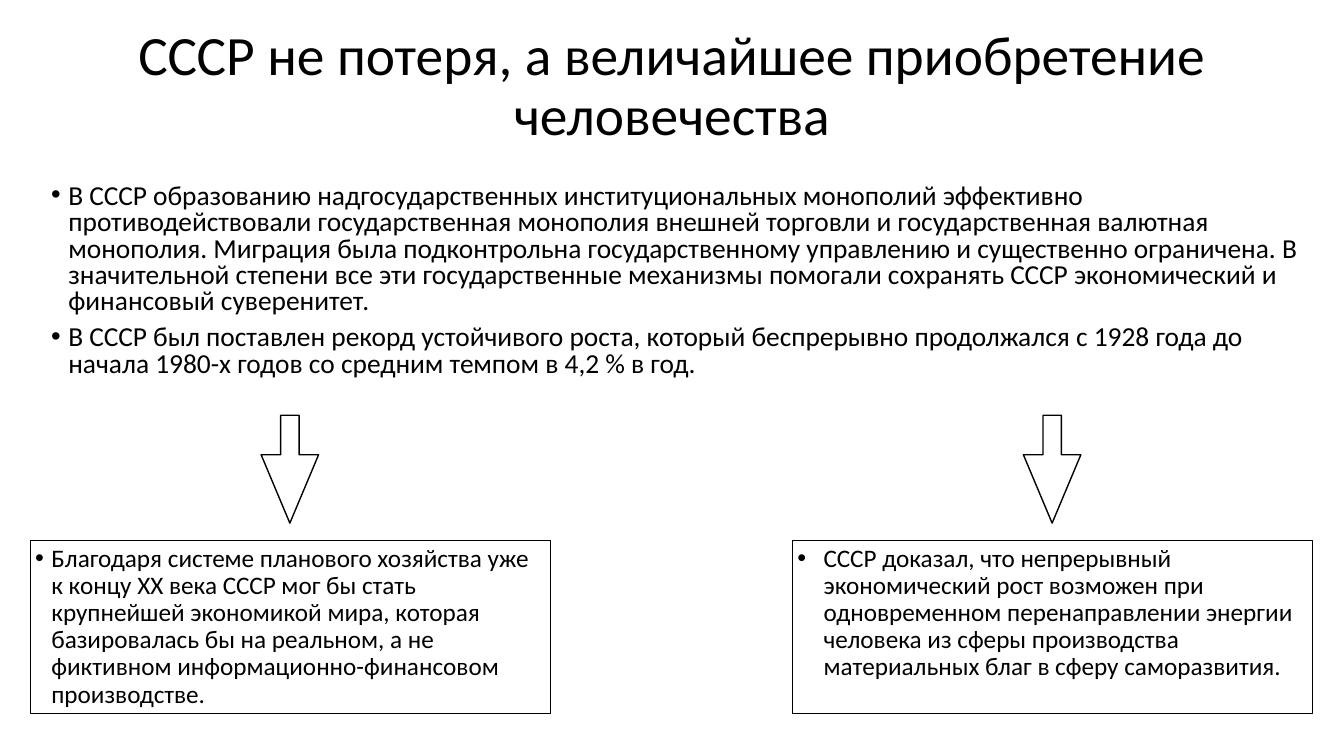
from dataclasses import dataclass

from lxml import etree
from pptx import Presentation
from pptx.dml.color import RGBColor
from pptx.enum.shapes import MSO_SHAPE
from pptx.enum.text import MSO_ANCHOR, MSO_AUTO_SIZE, PP_ALIGN
from pptx.oxml.ns import qn
from pptx.slide import Slide
from pptx.text.text import TextFrame, _Paragraph
from pptx.util import Inches, Pt

RECTANGLE = MSO_SHAPE.RECTANGLE
RIGHT_ARROW = MSO_SHAPE.RIGHT_ARROW
TOP, MIDDLE = MSO_ANCHOR.TOP, MSO_ANCHOR.MIDDLE
LEFT, CENTER = PP_ALIGN.LEFT, PP_ALIGN.CENTER
NO_AUTOFIT = MSO_AUTO_SIZE.NONE
TITLE_ONLY = 5


@dataclass(frozen=True)
class Theme:
    font: str = "Calibri"
    ink: RGBColor = RGBColor(0, 0, 0)
    paper: RGBColor = RGBColor(255, 255, 255)
    title_size: float = 39.6
    body_size: float = 19.6
    box_size: float = 18
    outline: float = 1


@dataclass(frozen=True)
class BulletStyle:
    size: float
    indent: float
    line_spacing: float
    space_before: float


@dataclass(frozen=True)
class Conclusion:
    box_left: float
    arrow_left: float
    indent: float
    text: str


THEME = Theme()

# Wording
TITLE = "СССР не потеря, а величайшее приобретение человечества"
ARGUMENTS = [
    "В СССР образованию надгосударственных институциональных монополий "
    "эффективно противодействовали государственная монополия внешней торговли "
    "и государственная валютная монополия. Миграция была подконтрольна "
    "государственному управлению и существенно ограничена. В значительной "
    "степени все эти государственные механизмы помогали сохранять СССР "
    "экономический и финансовый суверенитет.",
    "В СССР был поставлен рекорд устойчивого роста, который беспрерывно "
    "продолжался с 1928 года до начала 1980-х годов со средним темпом "
    "в 4,2 % в год.",
]
CONCLUSIONS = [
    Conclusion(
        0.3, 2.34, 0.16,
        "Благодаря системе планового хозяйства уже к концу XX века СССР мог бы "
        "стать крупнейшей экономикой мира, которая базировалась бы на реальном, "
        "а не фиктивном информационно-финансовом производстве.",
    ),
    Conclusion(
        7.86, 9.9, 0.26,
        "СССР доказал, что непрерывный экономический рост возможен при "
        "одновременном перенаправлении энергии человека из сферы производства "
        "материальных благ в сферу саморазвития.",
    ),
]


def add_span(para: _Paragraph, text: str, size: float) -> None:
    span = para.add_run()
    span.text = text
    span.font.name = THEME.font
    span.font.size = Pt(size)
    span.font.color.rgb = THEME.ink


def prepare_frame(frame: TextFrame, anchor: MSO_ANCHOR) -> None:
    frame.word_wrap = True
    frame.auto_size = NO_AUTOFIT
    frame.vertical_anchor = anchor


def write_bullets(frame: TextFrame, texts: list[str], style: BulletStyle) -> None:
    for index, text in enumerate(texts):
        para = frame.add_paragraph() if index else frame.paragraphs[0]
        para.alignment = LEFT
        para.line_spacing = style.line_spacing
        para.space_before = Pt(style.space_before)
        properties = para._p.get_or_add_pPr()
        properties.set("marL", str(Inches(style.indent)))
        properties.set("indent", str(-Inches(style.indent)))
        etree.SubElement(properties, qn("a:buFont")).set("typeface", "Arial")
        etree.SubElement(properties, qn("a:buChar")).set("char", "•")
        add_span(para, text, style.size)


def add_title(page: Slide) -> None:
    title = page.shapes.title
    title.left, title.top = Inches(0.55), Inches(0.2)
    title.width, title.height = Inches(12.23), Inches(1.33)
    prepare_frame(title.text_frame, MIDDLE)
    para = title.text_frame.paragraphs[0]
    para.alignment = CENTER
    para.line_spacing = 0.9
    add_span(para, TITLE, THEME.title_size)


def add_arguments(page: Slide) -> None:
    box = page.shapes.add_textbox(
        Inches(0.41), Inches(1.78), Inches(12.81), Inches(2.2))
    prepare_frame(box.text_frame, TOP)
    write_bullets(box.text_frame, ARGUMENTS,
                  BulletStyle(THEME.body_size, 0.17, 0.8, 7))


def add_conclusion(page: Slide, conclusion: Conclusion) -> None:
    # Arrow pointing down to the box
    arrow = page.shapes.add_shape(
        RIGHT_ARROW, Inches(conclusion.arrow_left), Inches(4.37),
        Inches(1.07), Inches(0.57))
    arrow.rotation = 90
    arrow.adjustments[0] = 0.32
    arrow.adjustments[1] = 1.19
    arrow.fill.solid()
    arrow.fill.fore_color.rgb = THEME.paper

    # Framed text
    box = page.shapes.add_shape(
        RECTANGLE, Inches(conclusion.box_left), Inches(5.36),
        Inches(5.16), Inches(1.72))
    box.fill.background()
    frame = box.text_frame
    prepare_frame(frame, TOP)
    frame.margin_left = frame.margin_right = Inches(0.05)
    frame.margin_top = frame.margin_bottom = Inches(0.05)
    write_bullets(frame, [conclusion.text],
                  BulletStyle(THEME.box_size, conclusion.indent, 0.9, 10))

    for shape in (arrow, box):
        shape.shadow.inherit = False
        shape.line.color.rgb = THEME.ink
        shape.line.width = Pt(THEME.outline)


def main() -> None:
    deck = Presentation()
    deck.slide_width, deck.slide_height = Inches(13.33), Inches(7.5)
    page = deck.slides.add_slide(deck.slide_layouts[TITLE_ONLY])
    add_title(page)
    add_arguments(page)
    for conclusion in CONCLUSIONS:
        add_conclusion(page, conclusion)
    deck.save("out.pptx")


if __name__ == "__main__":
    main()
